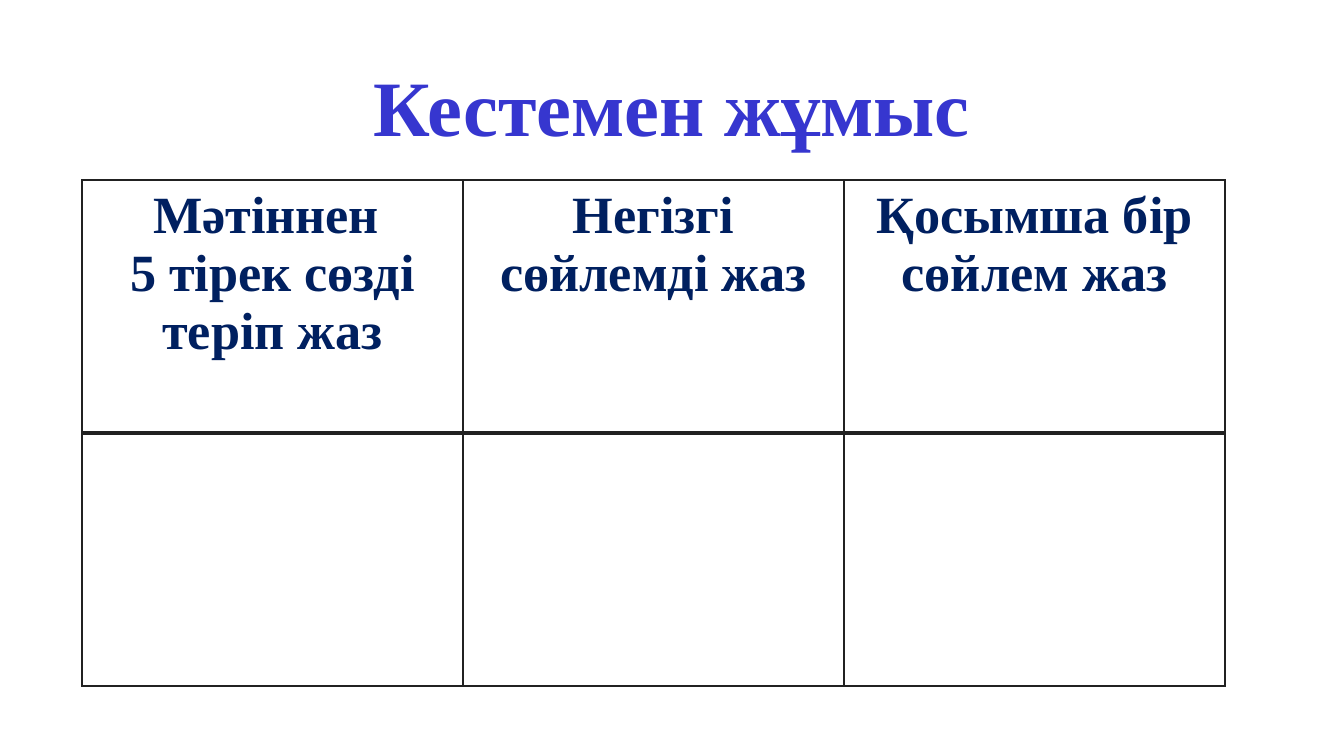
import pptx
import pptx.util
import pptx.dml.color
import pptx.enum.text
import pptx.oxml
import pptx.oxml.ns

TITLE = "Кестемен жұмыс"
HEADERS = [
    ["Мәтіннен ", "5 тірек сөзді теріп жаз"],
    ["Негізгі сөйлемді жаз"],
    ["Қосымша бір сөйлем жаз"],
]
ROWS = 2
COLORS = {"title": "3636CF", "header": "002060", "border": "212121"}
FONT = "Times New Roman"

SLIDE_W, SLIDE_H = 1344, 756
TITLE_BOX = (46, 43, 1252, 118)
TABLE_X, TABLE_Y, COL_W, ROW_H = 82, 180, 381, 253


def px(n):
    return round(n * 914400 / 134.4)


def write(tf, lines, size, color, bold=True):
    for i, line in enumerate(lines):
        p = tf.paragraphs[0] if i == 0 else tf.add_paragraph()
        p.alignment = pptx.enum.text.PP_ALIGN.CENTER
        r = p.add_run()
        r.text = line
        r.font.name = FONT
        r.font.size = pptx.util.Pt(size)
        r.font.bold = bold
        r.font.color.rgb = pptx.dml.color.RGBColor.from_string(COLORS[color])


def set_borders(cell, **widths):
    """Draw the four sides of a cell; widths are points by side (L, R, T, B)."""
    tcPr = cell._tc.get_or_add_tcPr()
    for i, side in enumerate("LRTB"):
        width = pptx.util.Pt(widths.get(side, 1))
        tcPr.insert(i, pptx.oxml.parse_xml(
            f'<a:ln{side} {pptx.oxml.ns.nsdecls("a")} w="{width}"><a:solidFill>'
            f'<a:srgbClr val="{COLORS["border"]}"/></a:solidFill></a:ln{side}>'))


prs = pptx.Presentation()
prs.slide_width, prs.slide_height = px(SLIDE_W), px(SLIDE_H)
s = prs.slides.add_slide(prs.slide_layouts[5])
for ph in list(s.placeholders):
    if ph != s.shapes.title:
        ph.element.getparent().remove(ph.element)

title = s.shapes.title
title.left, title.top, title.width, title.height = map(px, TITLE_BOX)
tf = title.text_frame
tf.vertical_anchor = pptx.enum.text.MSO_ANCHOR.BOTTOM
tf.margin_left = tf.margin_right = tf.margin_top = px(13)
tf.margin_bottom = px(9)
write(tf, [TITLE], size=42, color="title")

cols = len(HEADERS)
table = s.shapes.add_table(ROWS, cols, px(TABLE_X), px(TABLE_Y),
                           px(COL_W * cols), px(ROW_H * ROWS)).table
table.first_row = table.horz_banding = False
for col in table.columns:
    col.width = px(COL_W)
for row in table.rows:
    row.height = px(ROW_H)
for cell in table.iter_cells():
    cell.fill.background()
for c, lines in enumerate(HEADERS):
    write(table.cell(0, c).text_frame, lines, size=28, color="header")
    set_borders(table.cell(0, c), B=2)
    set_borders(table.cell(1, c), T=2)

prs.save("out.pptx")
